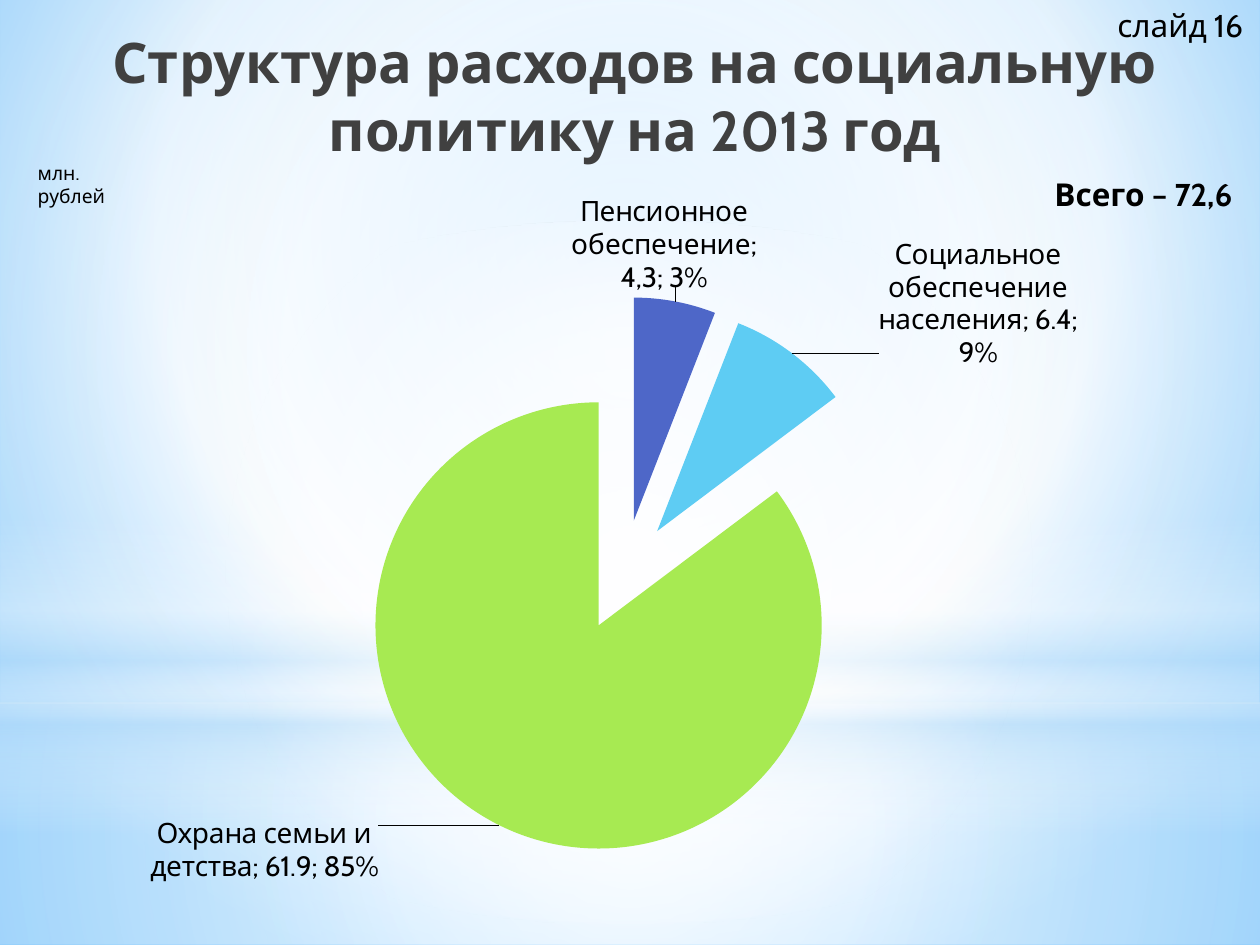
from lxml import etree
from pptx import Presentation
from pptx.chart.data import CategoryChartData
from pptx.dml.color import RGBColor
from pptx.enum.chart import XL_CHART_TYPE, XL_LABEL_POSITION
from pptx.enum.shapes import MSO_SHAPE
from pptx.enum.text import MSO_ANCHOR, PP_ALIGN
from pptx.oxml import parse_xml
from pptx.oxml.ns import nsdecls, qn
from pptx.util import Inches, Pt

PIE = XL_CHART_TYPE.PIE
OUTSIDE = XL_LABEL_POSITION.OUTSIDE_END
RECT, OVAL = MSO_SHAPE.RECTANGLE, MSO_SHAPE.OVAL
MIDDLE, TOP = MSO_ANCHOR.MIDDLE, MSO_ANCHOR.TOP
CENTER, LEFT = PP_ALIGN.CENTER, PP_ALIGN.LEFT
FONT = "Cabin"

PANELS = [
    (RECT, (0, 5.58, 10, 1.92),
     [(0, "FFFFFF", 91), (37, "FFFFFF", 76), (100, "B4DCFA", 79)], (50, 50, 50, 50)),
    (RECT, (0, 0, 10, 5.58),
     [(0, "FFFFFF", 89), (48, "FFFFFF", 62), (100, "B4DCFA", 79)], (50, 50, 50, 50)),
    (RECT, (0, 4.12, 10, 2.5),
     [(0, "FFFFFF", 0), (29, "FFFFFF", 30), (45, "B4DCFA", 40),
      (55, "FFFFFF", 26), (65, "B4DCFA", 60), (100, "FFFFFF", 0)], None),
    (OVAL, (0, 1.75, 10, 5.58),
     [(0, "FFFFFF", 100), (56, "FFFFFF", 0)], (50, 50, 50, 50)),
]
SLICES = [
    ("Пенсионное обеспечение", 4.3, "4E67C8", (-0.09, -0.01)),
    ("Социальное обеспечение населения", 6.4, "5ECCF3", (0.07, 0.03)),
    ("Охрана семьи и детства", 61.9, "A7EA52", (-0.1, -0.02)),
]
NOTES = [
    ("млн. рублей", (0.2, 1.23, 1.1, 0.31), 11, False, False),
    ("Всего – 72,6", (8.27, 1.34, 1.65, 0.4), 18, True, True),
    ("слайд 16", (8.77, 0, 1.23, 0.4), 18, False, False),
]


def rgb(value):
    """Turn a hex string into a colour."""
    return RGBColor.from_string(value)


def inches(box):
    """Turn a box of numbers into lengths."""
    return [Inches(v) for v in box]


def style_font(font, size, color="000000", bold=False):
    """Set the typeface, size, weight and colour of a font."""
    for name, value in {"name": FONT, "size": Pt(size), "bold": bold}.items():
        setattr(font, name, value)
    font.color.rgb = rgb(color)


def fill_gradient(fill, element, stops, focus):
    """Fill with a circular gradient around focus, or a vertical one."""
    fill.gradient()
    grad = element.find(".//" + qn("a:gradFill"))
    for child in list(grad):
        grad.remove(child)
    stop_list = etree.SubElement(grad, qn("a:gsLst"))
    for position, color, opacity in stops:
        stop = etree.SubElement(stop_list, qn("a:gs"), pos=str(position * 1000))
        clr = etree.SubElement(stop, qn("a:srgbClr"), val=color)
        if opacity < 100:
            etree.SubElement(clr, qn("a:alpha"), val=str(opacity * 1000))
    if focus:
        path = etree.SubElement(grad, qn("a:path"), path="circle")
        sides = {side: str(v * 1000) for side, v in zip("ltrb", focus)}
        etree.SubElement(path, qn("a:fillToRect"), **sides)
    else:
        etree.SubElement(grad, qn("a:lin"), ang="5400000", scaled="0")


def add_backdrop(s):
    """Paint the background and its translucent panels."""
    stops = [(0, "9ED5FF", 100), (60, "FFFFFF", 100), (100, "5BB9FF", 100)]
    fill_gradient(s.background.fill, s.element, stops, (20, 10, 20, 60))
    for kind, box, stops, focus in PANELS:
        sp = s.shapes.add_shape(kind, *inches(box))
        sp.shadow.inherit = False
        sp.line.fill.background()
        fill_gradient(sp.fill, sp.element, stops, focus)


def write(sp, text, size, color="000000", bold=False, align=LEFT, anchor=TOP, wrap=True):
    """Put one formatted paragraph into a shape."""
    tf = sp.text_frame
    tf.word_wrap, tf.vertical_anchor = wrap, anchor
    p = tf.paragraphs[0]
    p.alignment = align
    r = p.add_run()
    r.text = text
    style_font(r.font, size, color, bold)


def add_title(s, box):
    """Place the title placeholder in the box, above the backdrop."""
    sp = s.shapes.title
    sp.left, sp.top, sp.width, sp.height = inches(box)
    write(sp, "Структура расходов на социальную политику на 2013 год",
          32, "404040", True, CENTER, MIDDLE)
    sp.element.getparent().append(sp.element)


def manual_layout(**values):
    """Build a chart layout element from its values."""
    layout = parse_xml(f"<c:layout {nsdecls('c')}><c:manualLayout/></c:layout>")
    for name, value in values.items():
        etree.SubElement(layout[0], qn("c:" + name), val=str(value))
    return layout


def format_label(label, text):
    """Style a slice label, with its own wording if text is given."""
    if text:
        r = label.text_frame.paragraphs[0].add_run()
        r.text = text
        style_font(r.font, 16)
    else:
        style_font(label.font, 16)
    label.position = OUTSIDE


def add_pie(s, box):
    """Place the exploded pie chart in the box."""
    data = CategoryChartData()
    data.categories = [name for name, *_ in SLICES]
    data.add_series("Series 1", [value for _, value, *_ in SLICES])
    chart = s.shapes.add_chart(PIE, *inches(box), data).chart
    chart.has_title = chart.has_legend = False
    style_font(chart.font, 18)
    plot = chart.plots[0]
    plot.vary_by_categories = True
    area = chart.element.find(".//" + qn("c:plotArea"))
    for old in area.findall(qn("c:layout")):
        area.remove(old)
    area.insert(0, manual_layout(layoutTarget="inner", xMode="edge", yMode="edge",
                                 x=0.1, y=0.14, w=0.79, h=0.77))
    series = plot.series[0]
    ser = area.find(".//" + qn("c:ser"))
    ser.find(qn("c:tx")).addnext(etree.Element(qn("c:explosion"), val="25"))
    for i, (_, _, color, _) in enumerate(SLICES):
        point = series.points[i]
        point.format.fill.solid()
        point.format.fill.fore_color.rgb = rgb(color)
        format_label(point.data_label, "" if i else "Пенсионное обеспечение; 4,3; 3%")
    labels = series.data_labels
    style_font(labels.font, 16)
    labels.show_category_name = labels.show_percentage = labels.show_value = True
    for label, (*_, (x, y)) in zip(ser.iter(qn("c:dLbl")), SLICES):
        label.find(qn("c:idx")).addnext(manual_layout(x=x, y=y))
        for name in ("showVal", "showCatName", "showPercent"):
            label.find(qn("c:" + name)).set("val", "1")
        etree.SubElement(label, qn("c:separator")).text = "; "


def add_notes(s):
    """Place the unit, total and slide number captions."""
    for text, box, size, bold, wrap in NOTES:
        write(s.shapes.add_textbox(*inches(box)), text, size, bold=bold, wrap=wrap)


def main():
    """Build the slide and save it."""
    prs = Presentation()
    prs.slide_width, prs.slide_height = Inches(10), Inches(7.5)
    s = prs.slides.add_slide(prs.slide_layouts[5])
    add_backdrop(s)
    add_title(s, (0.75, 0.13, 8.58, 1.25))
    add_pie(s, (0.35, 1.55, 9.29, 5.75))
    add_notes(s)
    prs.save("out.pptx")


if __name__ == "__main__":
    main()
